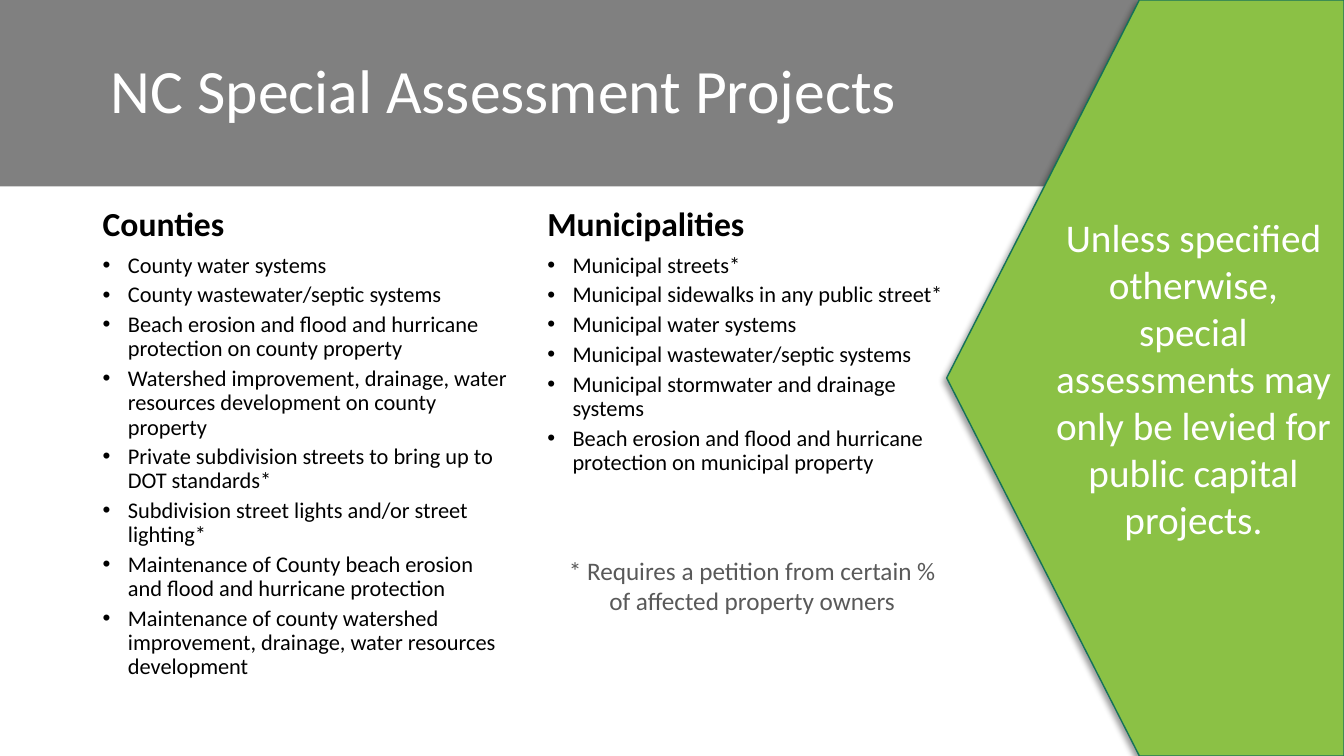
from lxml.etree import SubElement
from pptx import Presentation
from pptx.dml.color import RGBColor
from pptx.enum.shapes import MSO_SHAPE
from pptx.enum.text import MSO_ANCHOR, MSO_AUTO_SIZE, PP_ALIGN
from pptx.oxml.ns import qn
from pptx.util import Inches, Pt

WHITE = RGBColor(0xFF, 0xFF, 0xFF)
BLACK = RGBColor(0, 0, 0)
GRAY = RGBColor(0x80, 0x80, 0x80)
DARK_GRAY = RGBColor(0x59, 0x59, 0x59)
GREEN = RGBColor(0x8B, 0xC1, 0x45)
DARK_GREEN = RGBColor(0x15, 0x72, 0x59)

COLUMNS = [
    ("Counties", 0.92, [
        "County water systems",
        "County wastewater/septic systems",
        "Beach erosion and flood and hurricane protection on county property",
        "Watershed improvement, drainage, water resources development on county property",
        "Private subdivision streets to bring up to DOT standards*",
        "Subdivision street lights and/or street lighting*",
        "Maintenance of County beach erosion and flood and hurricane protection",
        "Maintenance of county watershed improvement, drainage, water resources development",
    ]),
    ("Municipalities", 5.33, [
        "Municipal streets*",
        "Municipal sidewalks in any public street*",
        "Municipal water systems",
        "Municipal wastewater/septic systems",
        "Municipal stormwater and drainage systems",
        "Beach erosion and flood and hurricane protection on municipal property",
    ]),
]


def set_text(sp, text, size, color, anchor, align=PP_ALIGN.LEFT):
    tf = sp.text_frame
    tf.text = text
    tf.word_wrap = True
    tf.auto_size = MSO_AUTO_SIZE.NONE
    tf.vertical_anchor = anchor
    for p in tf.paragraphs:
        p.alignment = align
        for r in p.runs:
            r.font.name = "Calibri"
            r.font.size = Pt(size)
            r.font.color.rgb = color
    return tf


prs = Presentation()
prs.slide_width = Inches(13.33)
prs.slide_height = Inches(7.5)
s = prs.slides.add_slide(prs.slide_layouts[5])

title = s.shapes.title
title.left, title.top = Inches(0), Inches(0)
title.width, title.height = Inches(13.33), Inches(1.85)
title.fill.solid()
title.fill.fore_color.rgb = GRAY
tf = set_text(title, "NC Special Assessment Projects", 44, WHITE, MSO_ANCHOR.MIDDLE)
tf.margin_left = Inches(1.1)
tf.paragraphs[0].line_spacing = 0.9

for heading, left, items in COLUMNS:
    sp = s.shapes.add_textbox(Inches(left), Inches(1.57), Inches(4.25), Inches(0.9))
    tf = set_text(sp, heading, 24, BLACK, MSO_ANCHOR.BOTTOM)
    p = tf.paragraphs[0]
    p.line_spacing = 0.9
    p.runs[0].font.bold = True

    sp = s.shapes.add_textbox(Inches(left), Inches(2.47), Inches(4.25), Inches(4.84))
    tf = set_text(sp, "\n".join(items), 16, BLACK, MSO_ANCHOR.TOP)
    for i, p in enumerate(tf.paragraphs):
        p.line_spacing = 0.9
        p.space_before = Pt(4 if i else 0)
        pPr = p._p.get_or_add_pPr()
        pPr.set("marL", str(Inches(0.25)))
        pPr.set("indent", str(Inches(-0.25)))
        SubElement(pPr, qn("a:buFont"), typeface="Arial")
        SubElement(pPr, qn("a:buChar"), char="•")

note = s.shapes.add_textbox(Inches(5.52), Inches(4.11), Inches(3.88), Inches(3.39))
set_text(note, "* Requires a petition from certain % of affected property owners",
         18, DARK_GRAY, MSO_ANCHOR.MIDDLE, PP_ALIGN.CENTER)

callout = s.shapes.add_shape(MSO_SHAPE.PENTAGON, Inches(9.39), Inches(0), Inches(3.94), Inches(7.5))
callout.adjustments[0] = 0.485
callout.fill.solid()
callout.fill.fore_color.rgb = GREEN
callout.line.color.rgb = DARK_GREEN
callout.line.width = Pt(1)
callout.shadow.inherit = False
spPr = callout.element.spPr
spPr.find(qn("a:xfrm")).set("flipH", "1")
shadow = SubElement(spPr.find(qn("a:effectLst")), qn("a:outerShdw"), blurRad=str(Pt(4)),
                    dist=str(Pt(3)), dir=str(135 * 60000), algn="tr", rotWithShape="0")
color = SubElement(shadow, qn("a:srgbClr"), val="000000")
SubElement(color, qn("a:alpha"), val="40000")
set_text(callout, "Unless specified otherwise, special assessments may only be levied "
         "for public capital projects.", 28, WHITE, MSO_ANCHOR.MIDDLE, PP_ALIGN.CENTER)

prs.save("out.pptx")
